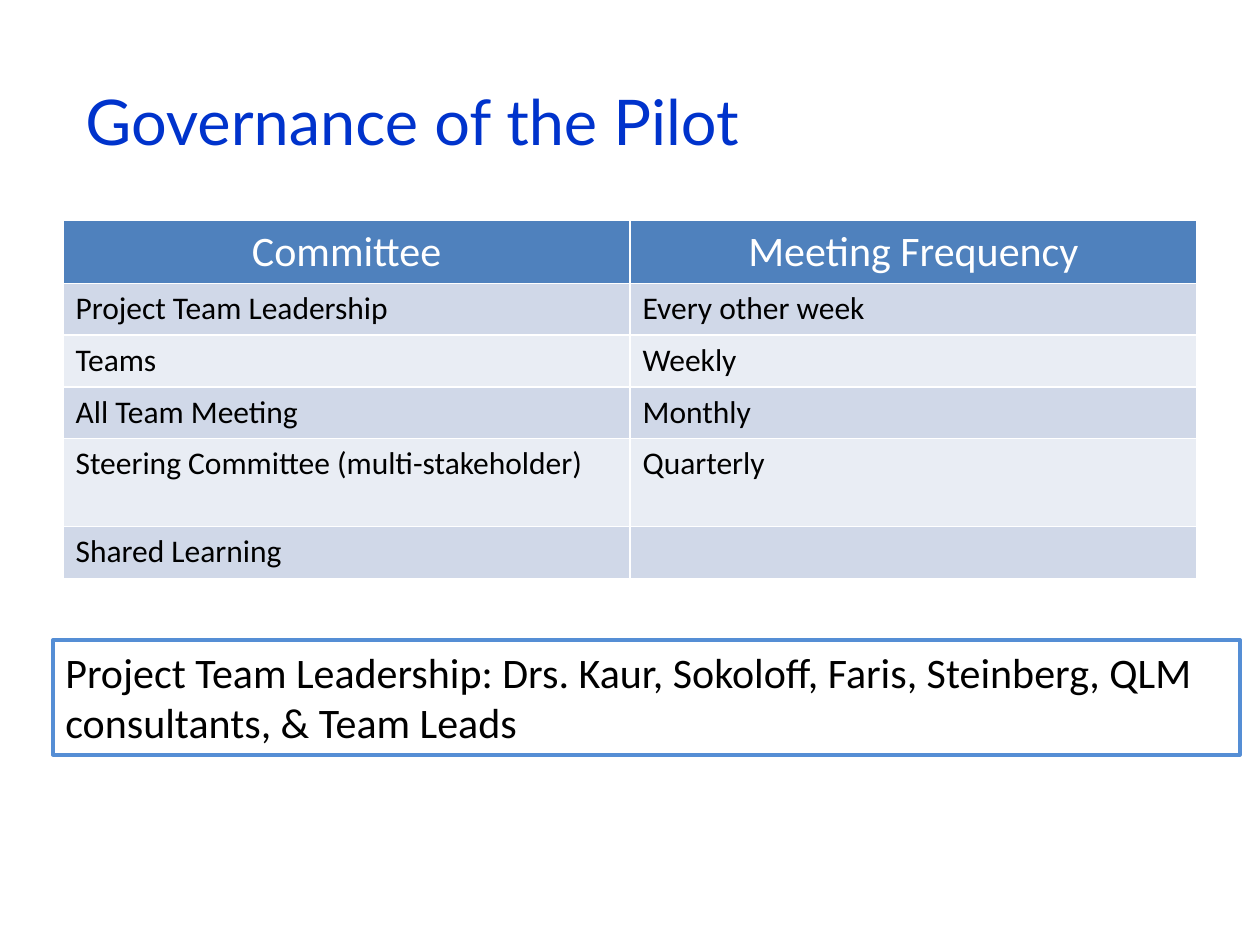
"""Build the pilot governance slide."""
import pptx
import pptx.dml.color
import pptx.enum.shapes
import pptx.enum.text
import pptx.util

Inches, Pt = pptx.util.Inches, pptx.util.Pt
ALIGN = pptx.enum.text.PP_ALIGN
ANCHOR = pptx.enum.text.MSO_ANCHOR

TITLE = "Governance of the Pilot"
ROWS = [
    ("Committee", "Meeting Frequency"),
    ("Project Team Leadership", "Every other week"),
    ("Teams", "Weekly"),
    ("All Team Meeting", "Monthly"),
    ("Steering Committee (multi-stakeholder)", "Quarterly"),
    ("Shared Learning", ""),
]
HEIGHTS = [0.41, 0.41, 0.41, 0.41, 0.7, 0.41]
LEADERS = ("Project Team Leadership: Drs. Kaur, Sokoloff, Faris, Steinberg, "
           "QLM consultants, & Team Leads")
HEADER_FILL = "4F81BD"
BAND_FILLS = ["E9EDF4", "D0D8E8"]


def rgb(value):
    return pptx.dml.color.RGBColor.from_string(value)


def write(tf, text, size, color, name="Calibri", align=ALIGN.LEFT):
    tf.word_wrap = True
    p = tf.paragraphs[0]
    p.text = text
    p.alignment = align
    p.font.name = name
    p.font.size = Pt(size)
    p.font.bold = False
    p.font.color.rgb = rgb(color)


def add_title(s):
    sp = s.shapes.add_textbox(Inches(0.58), Inches(0.33), Inches(9), Inches(1.25))
    sp.text_frame.vertical_anchor = ANCHOR.MIDDLE
    write(sp.text_frame, TITLE, 36, "0033CC", "Lato")


def add_committees(s):
    table = s.shapes.add_table(len(ROWS), len(ROWS[0]), Inches(0.5), Inches(1.75),
                               Inches(9), Inches(sum(HEIGHTS))).table
    for i, (texts, height) in enumerate(zip(ROWS, HEIGHTS)):
        table.rows[i].height = Inches(height)
        for cell, text in zip(table.rows[i].cells, texts):
            cell.fill.solid()
            cell.fill.fore_color.rgb = rgb(BAND_FILLS[i % 2] if i else HEADER_FILL)
            if i:
                write(cell.text_frame, text, 18, "000000")
            else:
                write(cell.text_frame, text, 24, "FFFFFF", align=ALIGN.CENTER)


def add_leaders(s):
    sp = s.shapes.add_shape(pptx.enum.shapes.MSO_SHAPE.RECTANGLE, Inches(0.42),
                            Inches(5.08), Inches(9.42), Inches(0.91))
    sp.shadow.inherit = False
    sp.fill.background()
    sp.line.color.rgb = rgb("558ED5")
    sp.line.width = Pt(2.25)
    sp.text_frame.vertical_anchor = ANCHOR.TOP
    write(sp.text_frame, LEADERS, 24, "000000")


def main():
    prs = pptx.Presentation()
    prs.slide_width, prs.slide_height = Inches(10), Inches(7.5)
    s = prs.slides.add_slide(prs.slide_layouts[6])
    add_title(s)
    add_committees(s)
    add_leaders(s)
    prs.save("out.pptx")


if __name__ == "__main__":
    main()
